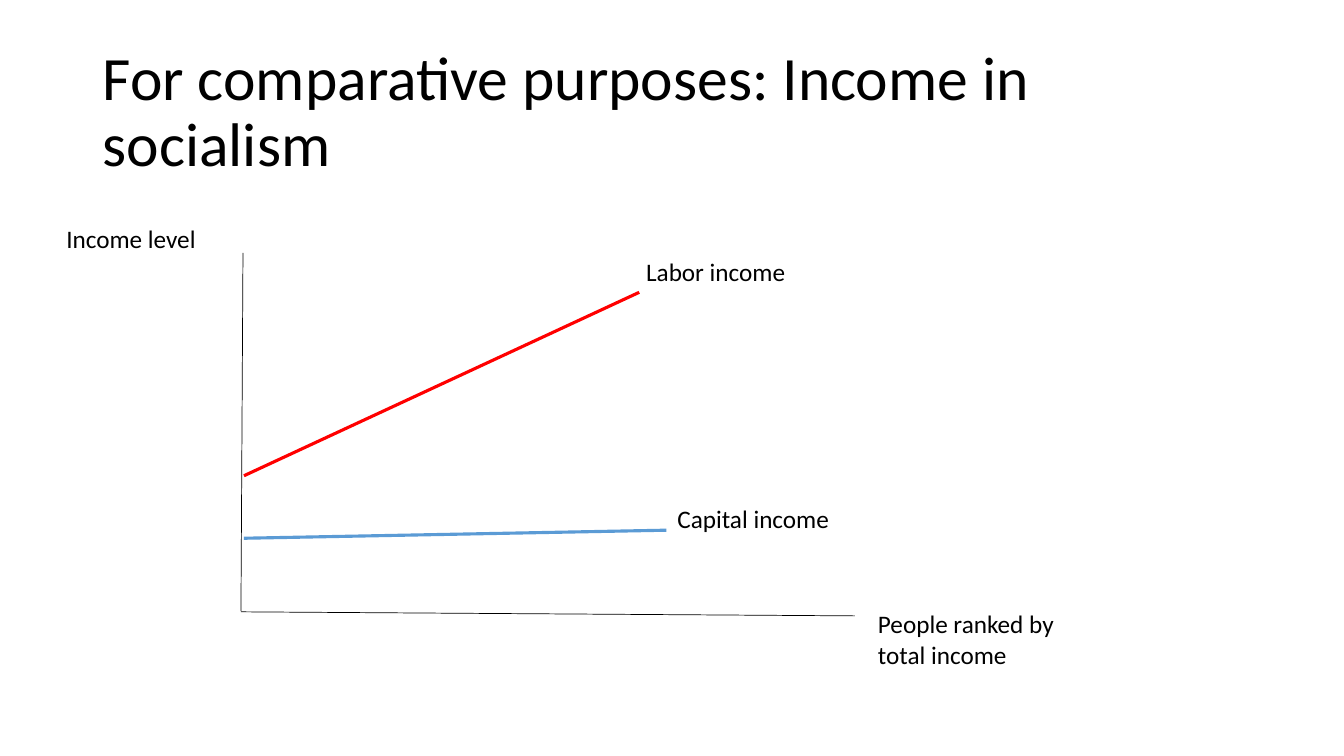
from pptx import Presentation
from pptx.dml.color import RGBColor
from pptx.enum.shapes import MSO_CONNECTOR
from pptx.enum.text import MSO_ANCHOR
from pptx.oxml.ns import qn
from pptx.util import Inches, Pt
from lxml.etree import SubElement


def color(hex_string):
    return RGBColor.from_string(hex_string)


def add_text(slide, text, box, size):
    shape = slide.shapes.add_textbox(*[Inches(length) for length in box])
    frame = shape.text_frame
    frame.word_wrap = True
    paragraph = frame.paragraphs[0]
    run = paragraph.add_run()
    run.text = text
    run.font.name = "Calibri"
    run.font.size = Pt(size)
    run.font.color.rgb = color("000000")
    return frame


presentation = Presentation()
presentation.slide_width = Inches(13.33)
presentation.slide_height = Inches(7.5)
slide = presentation.slides.add_slide(presentation.slide_layouts[6])

title = add_text(slide, "For comparative purposes: Income in socialism",
                 (0.92, 0.4, 11.5, 1.45), 44)
title.vertical_anchor = MSO_ANCHOR.MIDDLE
title.paragraphs[0].line_spacing = 0.9

axes = [
    ((2.41, 2.51), (2.39, 6.06), "000000", 0.5),
    ((2.39, 6.07), (8.48, 6.11), "000000", 0.5),
]
income_lines = [
    ((2.42, 4.72), (6.34, 2.9), "FF0000", 2.25),
    ((2.42, 5.34), (6.61, 5.26), "5B9BD5", 2.25),
]
for start, end, line_color, width in axes + income_lines:
    connector = slide.shapes.add_connector(
        MSO_CONNECTOR.STRAIGHT, *[Inches(length) for length in start + end])
    connector.line.color.rgb = color(line_color)
    connector.line.width = Pt(width)
    SubElement(connector._element.spPr, qn("a:effectLst"))

labels = [
    ("Labor income", (6.31, 2.49, 2.39, 0.4)),
    ("Capital income", (6.62, 4.94, 2.07, 0.4)),
    ("People ranked by total income", (8.61, 5.99, 2.37, 0.71)),
    ("Income level", (0.56, 2.17, 1.56, 0.4)),
]
for text, box in labels:
    add_text(slide, text, box, 18)

presentation.save("out.pptx")
